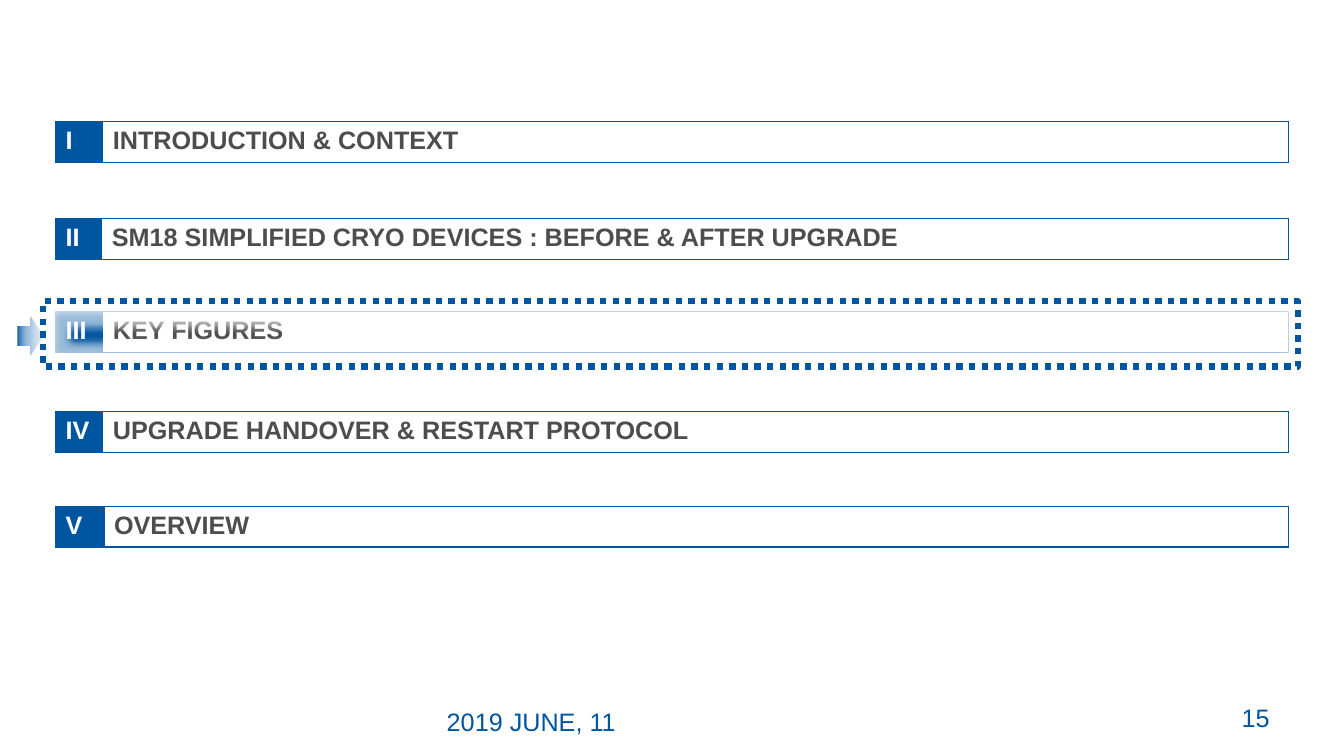
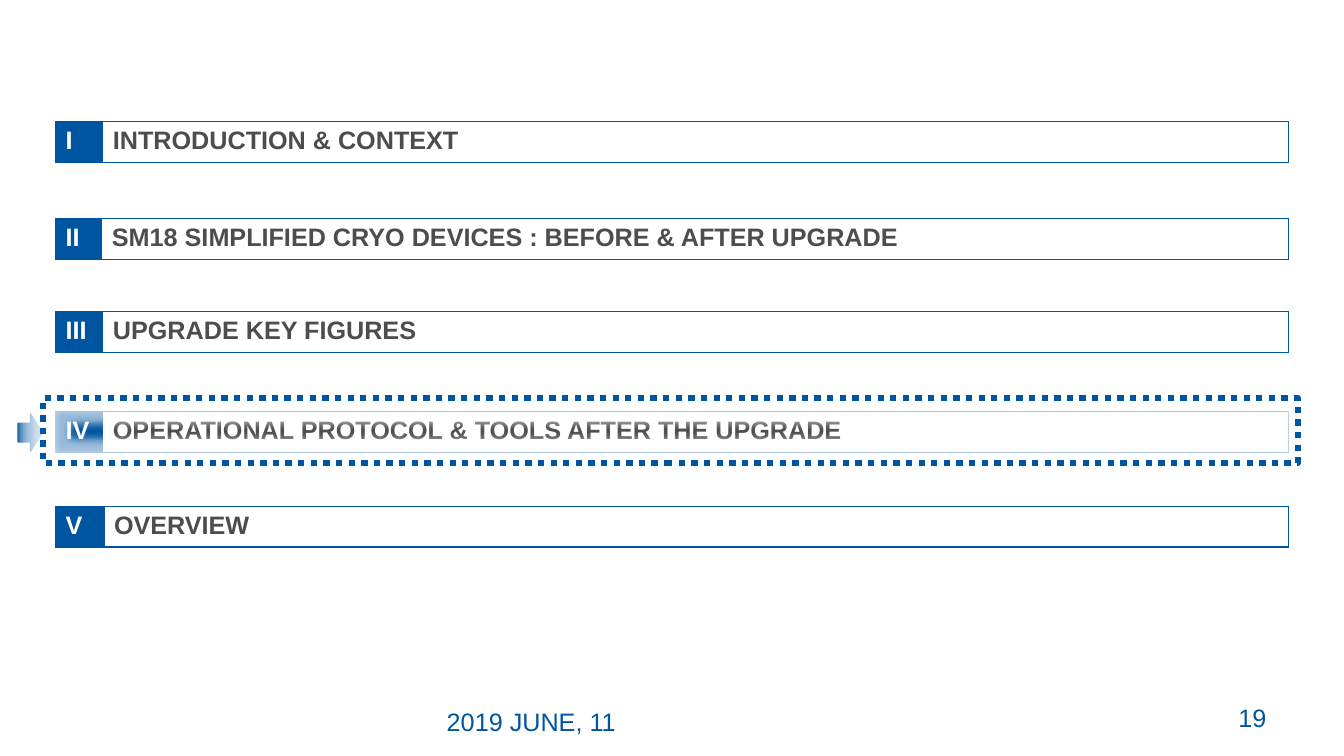
from lxml.etree import SubElement
from pptx import Presentation
from pptx.dml.color import RGBColor
from pptx.enum.dml import MSO_LINE
from pptx.enum.shapes import MSO_SHAPE
from pptx.enum.text import PP_ALIGN
from pptx.oxml.ns import qn
from pptx.util import Pt

PX = 9525
COLORS = {"blue": "0055A0", "gray": "4D4D4D", "white": "FFFFFF"}


def px(length):
    return length * PX


def rgb(name):
    return RGBColor.from_string(COLORS[name])


def write_text(frame, text, color="blue", size=18, bold=False, font="Arial"):
    paragraph = frame.paragraphs[0]
    paragraph.alignment = PP_ALIGN.LEFT
    run = paragraph.add_run()
    run.text = text
    run.font.name = font
    run.font.size = Pt(size)
    run.font.bold = bold
    run.font.color.rgb = rgb(color)


def add_color(parent, name, alpha=None):
    color = SubElement(parent, qn("a:srgbClr"), val=COLORS[name])
    if alpha is not None:
        SubElement(color, qn("a:alpha"), val=str(alpha * 1000))


class AgendaDeck:
    LEFT = 53
    WIDTH = 1174
    ROW_HEIGHT = 39

    def __init__(self):
        self.presentation = Presentation()
        self.presentation.slide_width = px(1280)
        self.presentation.slide_height = px(720)
        self.slide = None

    def new_slide(self):
        blank_layout = self.presentation.slide_layouts[6]
        self.slide = self.presentation.slides.add_slide(blank_layout)

    def label(self, text, left, top, width, height):
        box = self.slide.shapes.add_textbox(*map(px, (left, top, width, height)))
        box.text_frame.word_wrap = True
        write_text(box.text_frame, text)

    def cell(self, cell, text, color, fill=None):
        write_text(cell.text_frame, text, color=color, bold=True)
        properties = cell._tc.get_or_add_tcPr()
        for side in ("lnL", "lnR", "lnT", "lnB"):
            border = SubElement(properties, qn(f"a:{side}"), w=str(Pt(1)))
            add_color(SubElement(border, qn("a:solidFill")), "blue")
        if fill:
            cell.fill.solid()
            cell.fill.fore_color.rgb = rgb(fill)
        else:
            cell.fill.background()

    def section(self, numeral, heading, top, numeral_width):
        bar = self.slide.shapes.add_table(
            1, 2, *map(px, (self.LEFT, top, self.WIDTH, self.ROW_HEIGHT))
        ).table
        bar.first_row = False
        bar.horz_banding = False
        bar.columns[0].width = px(numeral_width)
        bar.columns[1].width = px(self.WIDTH - numeral_width)
        self.cell(bar.cell(0, 0), numeral, "white", fill="blue")
        self.cell(bar.cell(0, 1), heading, "gray")

    def shape(self, kind, left, top, width, height, line_width):
        shape = self.slide.shapes.add_shape(
            kind, *map(px, (left, top, width, height))
        )
        shape.shadow.inherit = False
        shape.line.color.rgb = rgb("blue")
        shape.line.width = Pt(line_width)
        return shape

    def highlight(self, top):
        pointer = self.shape(MSO_SHAPE.DOWN_ARROW, 11, top + 21, 36, 24, 0.75)
        pointer.rotation = 270
        pointer.fill.solid()
        pointer.fill.fore_color.rgb = rgb("blue")

        frame = self.shape(MSO_SHAPE.RECTANGLE, 41, top, 1195, 62, 4.5)
        frame.fill.background()
        frame.line.dash_style = MSO_LINE.ROUND_DOT
        effects = frame._element.spPr.find(qn("a:effectLst"))
        glow = SubElement(effects, qn("a:glow"), rad=str(Pt(11)))
        add_color(glow, "white", alpha=60)

    def footer(self, page, page_left):
        self.label(page, page_left, 664, 1232 - page_left, 38)
        self.label("2019 JUNE, 11", 416, 668, 299, 38)


SECTION_ROWS = [
    ("I", 116, 45),
    ("II", 208, 44),
    ("III", 297, 45),
    ("IV", 392, 45),
    ("V", 482, 46),
]
INTRODUCTION = "INTRODUCTION & CONTEXT"
DEVICES = "SM18 SIMPLIFIED CRYO DEVICES : BEFORE & AFTER UPGRADE"
OVERVIEW = "OVERVIEW"
AGENDAS = [
    ("15", 1173, 287, "KEY FIGURES", "UPGRADE HANDOVER & RESTART PROTOCOL"),
    ("19", 1170, 379, "UPGRADE KEY FIGURES",
     "OPERATIONAL PROTOCOL & TOOLS AFTER THE UPGRADE"),
]


def main():
    deck = AgendaDeck()
    for page, page_left, highlight_top, figures, protocol in AGENDAS:
        deck.new_slide()
        headings = (INTRODUCTION, DEVICES, figures, protocol, OVERVIEW)
        for (numeral, top, numeral_width), heading in zip(SECTION_ROWS, headings):
            deck.section(numeral, heading, top, numeral_width)
        deck.highlight(highlight_top)
        deck.footer(page, page_left)
    deck.presentation.save("out.pptx")


if __name__ == "__main__":
    main()
